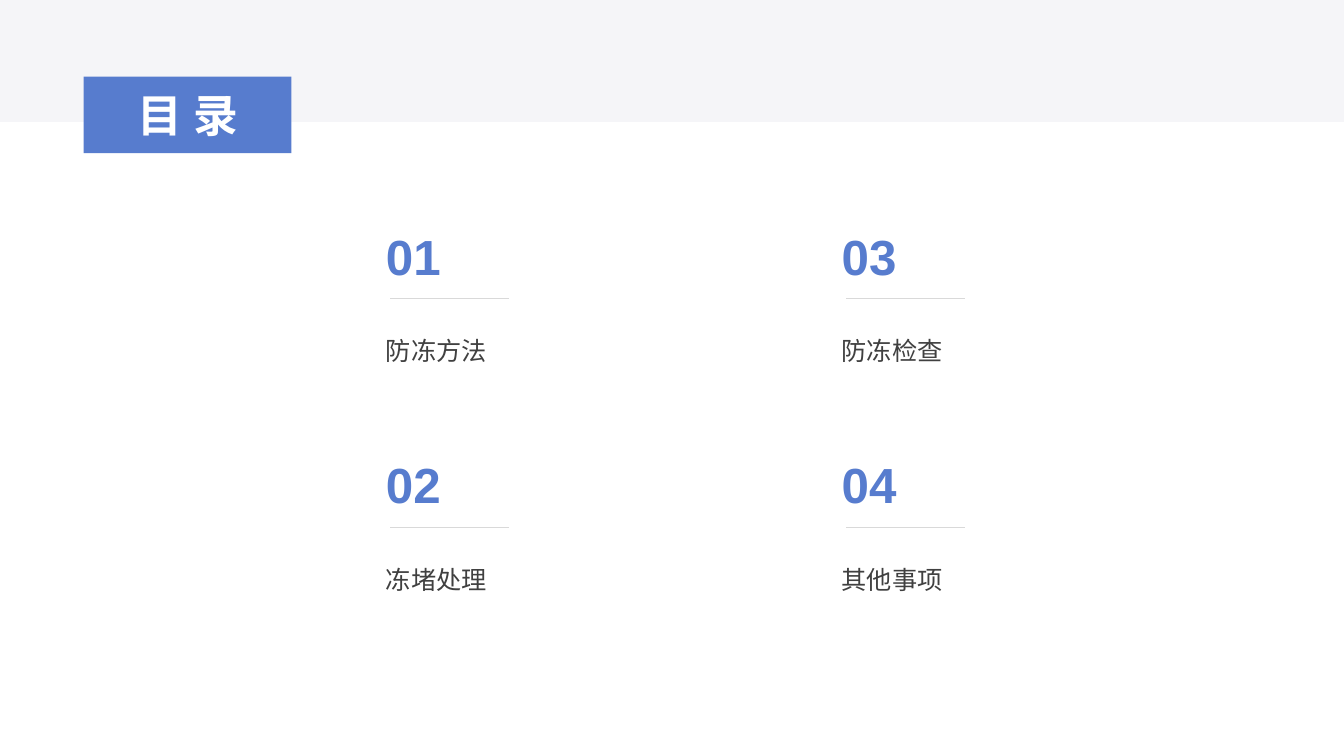
from lxml import etree
from pptx import Presentation
from pptx import util as u
from pptx.dml import color
from pptx.enum import shapes, text
from pptx.oxml import ns

BLUE, GREY, RULE, INK, WHITE = "577CCE", "F5F5F8", "D9D9D9", "404040", "FFFFFF"
LEFT, COLUMN_STEP = 3.73, 4.52
TOP, ROW_STEP = 2.14, 2.27
TOPICS = ["防冻方法", "冻堵处理", "防冻检查", "其他事项"]

NUMBER = {"size": u.Pt(35.2), "bold": True}
TOPIC = {"size": u.Pt(18)}
TITLE = {"size": u.Pt(32), "bold": True}
TOPIC_PARA = {
    "alignment": text.PP_ALIGN.JUSTIFY,
    "line_spacing": 1.5,
    "space_after": u.Pt(20),
}


def rgb(value):
    return color.RGBColor.from_string(value)


def apply(target, values):
    for name, value in values.items():
        setattr(target, name, value)


def write(frame, words, hue, font, para_format):
    para = frame.paragraphs[0]
    apply(para, para_format)
    span = para.add_run()
    span.text = words
    apply(span.font, {"name": "Arial", **font})
    span.font.color.rgb = rgb(hue)
    return span


def add_block(page, left, top, width, height, fill):
    block = page.shapes.add_shape(
        shapes.MSO_SHAPE.RECTANGLE, *map(u.Inches, (left, top, width, height))
    )
    block.shadow.inherit = False
    block.fill.solid()
    block.fill.fore_color.rgb = rgb(fill)
    block.line.fill.background()
    return block


def add_label(page, left, top, width, height, words, hue, font, para_format, inset):
    box = page.shapes.add_textbox(*map(u.Inches, (left, top, width, height)))
    apply(box.text_frame, {"word_wrap": True, "margin_top": u.Inches(inset)})
    write(box.text_frame, words, hue, font, para_format)


def add_rule(page, left, top, width):
    rule = page.shapes.add_connector(
        shapes.MSO_CONNECTOR.STRAIGHT,
        *map(u.Inches, (left + width, top, left, top)),
    )
    rule.line.color.rgb = rgb(RULE)
    rule.line.width = u.Pt(0.5)
    etree.SubElement(rule._element.spPr, ns.qn("a:effectLst"))


def add_topic(page, index, words):
    column, row = divmod(index, 2)
    left, top = LEFT + column * COLUMN_STEP, TOP + row * ROW_STEP
    add_label(page, left, top + 0.99, 3.54, 1.07, words, INK, TOPIC, TOPIC_PARA, 0.05)
    add_label(page, left, top, 0.89, 0.84, f"{index + 1:02}", BLUE, NUMBER, {}, 0.1)
    add_rule(page, left + 0.14, top + 0.82, 1.18)


def add_title(page):
    block = add_block(page, 0.83, 0.76, 2.06, 0.76, BLUE)
    block.text_frame.vertical_anchor = text.MSO_ANCHOR.MIDDLE
    centred = {"alignment": text.PP_ALIGN.CENTER}
    span = write(block.text_frame, "目录", WHITE, TITLE, centred)
    span._r.get_or_add_rPr().set("spc", "800")


def main():
    deck = Presentation()
    apply(deck, {"slide_width": u.Inches(13.33), "slide_height": u.Inches(7.5)})
    page = deck.slides.add_slide(deck.slide_layouts[6])
    add_block(page, 0, 0, 13.33, 1.21, GREY)
    for index, words in enumerate(TOPICS):
        add_topic(page, index, words)
    add_title(page)
    deck.save("out.pptx")


if __name__ == "__main__":
    main()
